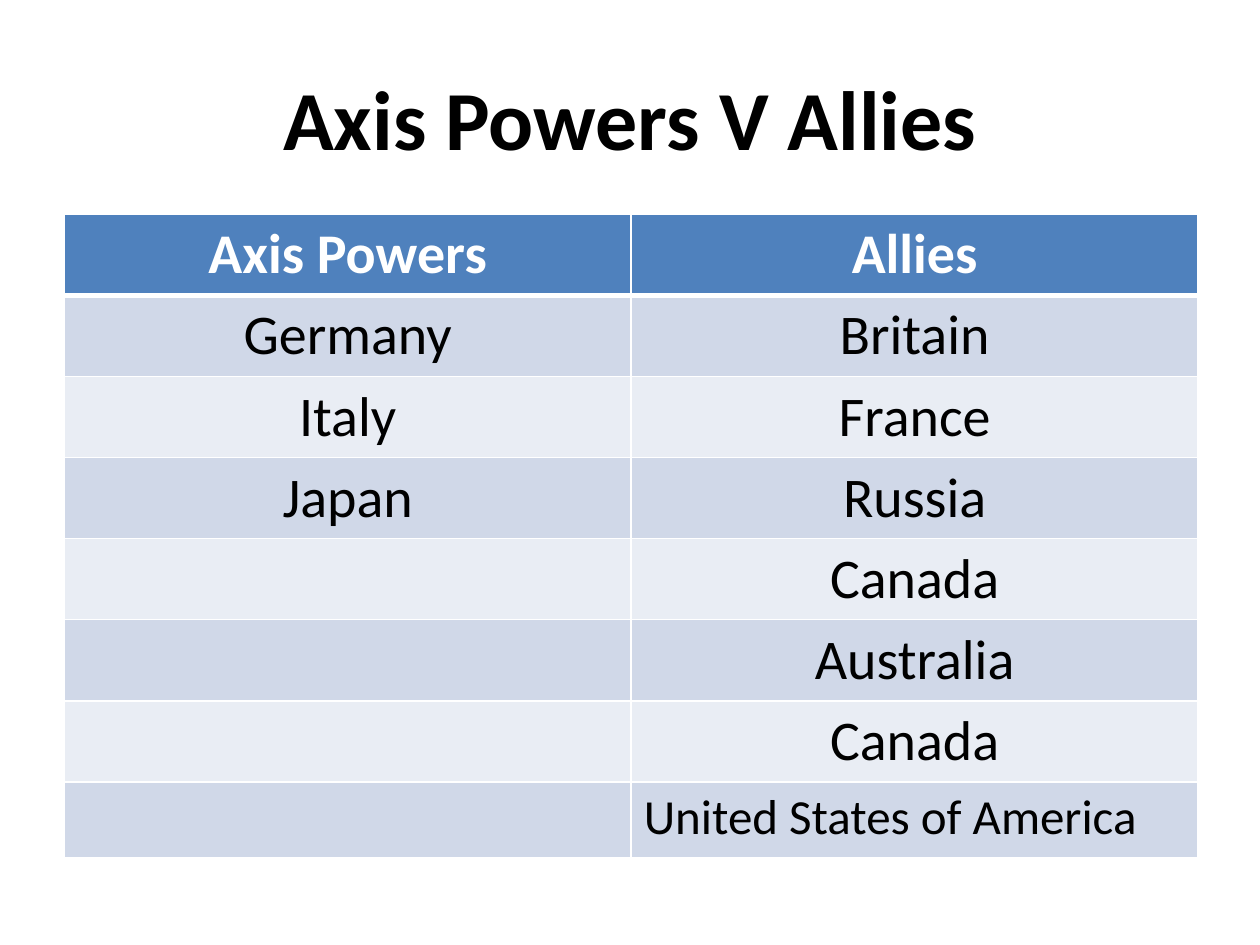
from dataclasses import dataclass

import pptx
import pptx.util
from lxml import etree
from pptx.dml.color import RGBColor
from pptx.enum.text import MSO_ANCHOR, PP_ALIGN
from pptx.oxml.ns import qn

EMU_PER_PX = 9144  # 100 px to the inch


@dataclass(frozen=True)
class Theme:
    font: str = "Calibri"
    text: str = "000000"
    header_text: str = "FFFFFF"
    header_fill: str = "4F81BD"
    band_fills: tuple = ("D0D8E8", "E9EDF4")
    border: str = "FFFFFF"
    border_width: int = 1
    header_rule_width: int = 3
    title_size: int = 48
    table_size: int = 32
    long_entry_size: int = 28


def px(length):
    return pptx.util.Emu(length * EMU_PER_PX)


class SlideBuilder:
    """Holds the theme and the current slide."""

    def __init__(self, slide, theme):
        self.slide = slide
        self.theme = theme

    def format_text(self, text_frame, size, color, bold=False, align=PP_ALIGN.CENTER):
        for paragraph in text_frame.paragraphs:
            paragraph.alignment = align
            for run in paragraph.runs:
                run.font.name = self.theme.font
                run.font.size = pptx.util.Pt(size)
                run.font.bold = bold
                run.font.color.rgb = RGBColor.from_string(color)

    def title(self, text, left, top, width, height):
        shape = self.slide.shapes.title
        shape.left, shape.top = px(left), px(top)
        shape.width, shape.height = px(width), px(height)
        shape.text_frame.text = text
        shape.text_frame.vertical_anchor = MSO_ANCHOR.MIDDLE
        self.format_text(shape.text_frame, self.theme.title_size, self.theme.text, bold=True)

    def cell_borders(self, cell, top_width, bottom_width):
        properties = cell._tc.get_or_add_tcPr()
        side_width = self.theme.border_width
        widths = {"a:lnL": side_width, "a:lnR": side_width,
                  "a:lnT": top_width, "a:lnB": bottom_width}
        for tag, width in widths.items():
            line = etree.SubElement(properties, qn(tag), w=str(pptx.util.Pt(width)))
            fill = etree.SubElement(line, qn("a:solidFill"))
            etree.SubElement(fill, qn("a:srgbClr"), val=self.theme.border)

    def table(self, rows, left, top, width, row_height):
        """Draw a header row and banded rows; None leaves a cell empty."""
        theme = self.theme
        table = self.slide.shapes.add_table(
            len(rows), len(rows[0]), px(left), px(top), px(width), px(row_height * len(rows))
        ).table
        for row_index, entries in enumerate(rows):
            is_header = row_index == 0
            fill = theme.header_fill if is_header else theme.band_fills[(row_index - 1) % 2]
            color = theme.header_text if is_header else theme.text
            top_width = theme.header_rule_width if row_index == 1 else theme.border_width
            bottom_width = theme.header_rule_width if is_header else theme.border_width
            for column_index, entry in enumerate(entries):
                cell = table.cell(row_index, column_index)
                self.cell_borders(cell, top_width, bottom_width)
                cell.fill.solid()
                cell.fill.fore_color.rgb = RGBColor.from_string(fill)
                if entry:
                    cell.text_frame.text = entry
                    self.format_text(cell.text_frame, theme.table_size, color, bold=is_header)
        return table


def main():
    presentation = pptx.Presentation()
    presentation.slide_width, presentation.slide_height = px(1000), px(750)
    theme = Theme()
    title_only = presentation.slide_layouts[5]
    builder = SlideBuilder(presentation.slides.add_slide(title_only), theme)

    builder.title("Axis Powers V Allies", 50, 30, 900, 125)
    powers = [
        ("Axis Powers", "Allies"),
        ("Germany", "Britain"),
        ("Italy", "France"),
        ("Japan", "Russia"),
        (None, "Canada"),
        (None, "Australia"),
        (None, "Canada"),
        (None, "United States of America"),
    ]
    table = builder.table(powers, left=51, top=170, width=900, row_height=60)
    longest_entry = table.cell(len(powers) - 1, 1)
    builder.format_text(longest_entry.text_frame, theme.long_entry_size, theme.text,
                        align=PP_ALIGN.LEFT)

    presentation.save("out.pptx")


if __name__ == "__main__":
    main()
